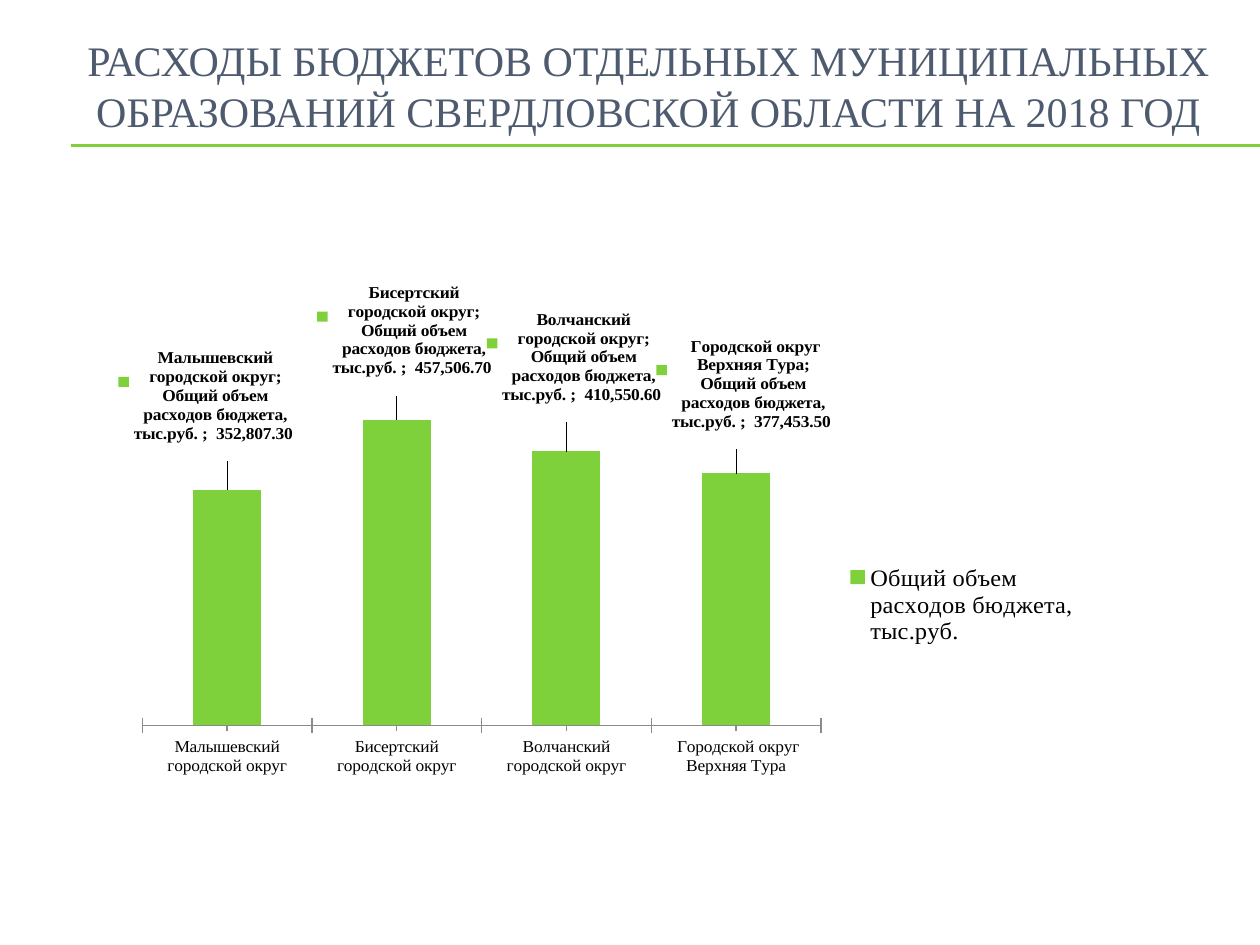
from pptx import Presentation
from pptx import util as u
from pptx.chart.data import CategoryChartData
from pptx.dml.color import RGBColor
from pptx.enum import chart as ch, shapes, text
from pptx.oxml import parse_xml
from pptx.oxml.ns import nsdecls

FONT = "Times New Roman"
GREEN = "7FD13B"
NUM_FMT = r"_-* #,##0.00_р_._-;\-* #,##0.00_р_._-;_-"


def rgb(value):
    return RGBColor.from_string(value)


def layout(x, y, w=None, h=None, inner=False):
    target = '<c:layoutTarget val="inner"/>' if inner else ""
    modes = '<c:xMode val="edge"/><c:yMode val="edge"/>' if w else ""
    size = f'<c:w val="{w}"/><c:h val="{h}"/>' if w else ""
    return (f'<c:layout {nsdecls("c")}><c:manualLayout>{target}{modes}'
            f'<c:x val="{x}"/><c:y val="{y}"/>{size}</c:manualLayout></c:layout>')


prs = Presentation()
prs.slide_width, prs.slide_height = u.Inches(10), u.Inches(7.5)
s = prs.slides.add_slide(prs.slide_layouts[5])

for y in (1.15, 1.16):
    line = s.shapes.add_connector(shapes.MSO_CONNECTOR.STRAIGHT, u.Inches(0.56), u.Inches(y),
                                  u.Inches(10), u.Inches(y))
    line.line.color.rgb = rgb(GREEN)
    line.line.width = u.Pt(0.75)
    line._element.spPr.append(parse_xml(f'<a:effectLst {nsdecls("a")}/>'))

title = s.shapes.title
title.left, title.top = u.Inches(0.55), u.Inches(0.16)
title.width, title.height = u.Inches(9.19), u.Inches(1.03)
tf = title.text_frame
tf.word_wrap = True
tf.auto_size = text.MSO_AUTO_SIZE.NONE
tf.vertical_anchor = text.MSO_ANCHOR.MIDDLE
p = tf.paragraphs[0]
p.alignment = text.PP_ALIGN.CENTER
r = p.add_run()
r.text = "РАСХОДЫ БЮДЖЕТОВ ОТДЕЛЬНЫХ МУНИЦИПАЛЬНЫХ ОБРАЗОВАНИЙ СВЕРДЛОВСКОЙ ОБЛАСТИ НА 2018 ГОД"
r.font.size, r.font.name = u.Pt(24), FONT
r.font.color.rgb = rgb("4E5B6F")

data = CategoryChartData(number_format=NUM_FMT)
data.categories = ["Малышевский городской округ", "Бисертский городской округ",
                   "Волчанский городской округ", " Городской округ Верхняя Тура"]
data.add_series("Общий объем расходов бюджета, тыс.руб. ", [352807.3, 457506.7, 410550.6, 377453.5])
chart = s.shapes.add_chart(ch.XL_CHART_TYPE.COLUMN_CLUSTERED, u.Inches(0.94), u.Inches(2.25),
                           u.Inches(7.73), u.Inches(3.92), data).chart
chart.has_title = False
chart.font.size, chart.font.name = u.Pt(10), "Cabin"
chart.font.color.rgb = rgb("000000")

plot = chart.plots[0]
plot.gap_width = 150
plot.vary_by_categories = False
fill = plot.series[0].format.fill
fill.solid()
fill.fore_color.rgb = rgb(GREEN)

axis = chart.value_axis
axis.minimum_scale, axis.maximum_scale = 0, 500000
axis.has_major_gridlines = False
axis.visible = False

axis = chart.category_axis
axis.major_tick_mark = ch.XL_TICK_MARK.CROSS
axis.minor_tick_mark = ch.XL_TICK_MARK.OUTSIDE
axis.format.line.color.rgb = rgb("8B8B8B")
axis.tick_labels.font.name = FONT
axis.tick_labels.font.size = u.Pt(10)

chart.has_legend = True
legend = chart.legend
legend.position = ch.XL_LEGEND_POSITION.RIGHT
legend.include_in_layout = True
legend.font.size, legend.font.name = u.Pt(14), FONT
legend_pos = chart.element.xpath(".//c:legendPos")[0]
legend_pos.addnext(parse_xml(layout(0.74, 0.55, 0.25, 0.16)))

plot_area = chart.element.xpath(".//c:plotArea")[0]
for old in plot_area.xpath("c:layout"):
    plot_area.remove(old)
plot_area.insert(0, parse_xml(layout(0.02, 0.18, 0.7, 0.71, inner=True)))

label_format = (
    f'<c:numFmt formatCode="{NUM_FMT}" sourceLinked="0"/><c:spPr><a:noFill/></c:spPr>'
    f'<c:txPr><a:bodyPr/><a:p><a:pPr><a:defRPr sz="1000" b="1"><a:latin typeface="{FONT}"/>'
    '</a:defRPr></a:pPr><a:endParaRPr lang="ru-RU"/></a:p></c:txPr><c:dLblPos val="outEnd"/>'
    '<c:showLegendKey val="1"/><c:showVal val="1"/><c:showCatName val="1"/>'
    '<c:showSerName val="1"/><c:showPercent val="0"/><c:showBubbleSize val="0"/>'
    '<c:separator>; </c:separator>')
offsets = [(-0.02, -0.05), (0.01, -0.04), (0.01, -0.05), (0.01, -0.04)]
points = "".join(f'<c:dLbl><c:idx val="{i}"/>{layout(x, y)}{label_format}</c:dLbl>'
                 for i, (x, y) in enumerate(offsets))
labels = parse_xml(f'<c:dLbls {nsdecls("c", "a")}>{points}{label_format}</c:dLbls>')
chart.element.xpath(".//c:ser/c:cat")[0].addprevious(labels)

prs.save("out.pptx")
